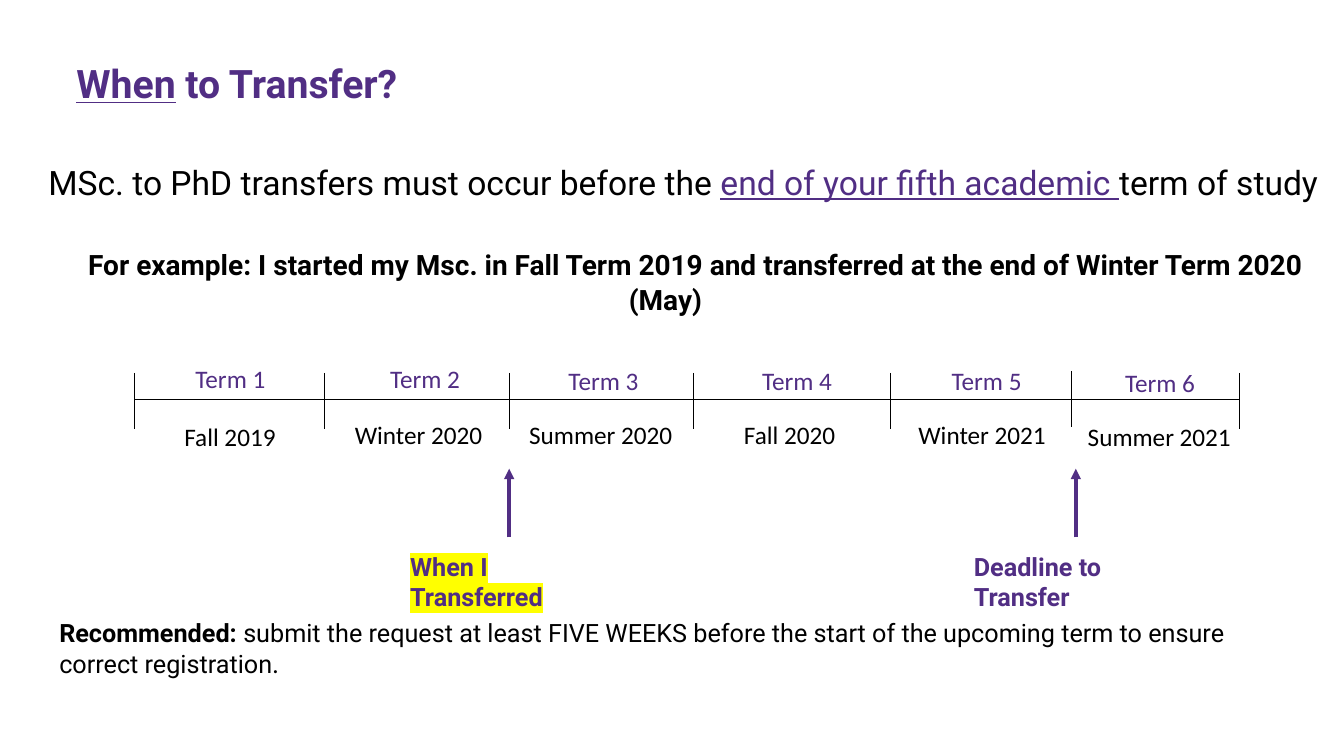
from lxml import etree
from pptx import Presentation
from pptx.dml.color import RGBColor
from pptx.enum.shapes import MSO_CONNECTOR
from pptx.enum.text import MSO_ANCHOR, PP_ALIGN
from pptx.oxml.ns import qn
from pptx.util import Inches, Pt

STRAIGHT = MSO_CONNECTOR.STRAIGHT
TOP = MSO_ANCHOR.TOP
LEFT, CENTER = PP_ALIGN.LEFT, PP_ALIGN.CENTER

# Content: a run is (text, style names)
TITLE = [("When", "title underline"), (" to Transfer?", "title")]
RULE = [
    ("MSc. to PhD transfers must occur before the ", "rule"),
    ("end of your fifth academic ", "rule accent underline"),
    ("term of study", "rule"),
]
EXAMPLE = [(
    "For example: I started my Msc. in Fall Term 2019 and transferred "
    "at the end of Winter Term 2020 (May)", "example",
)]
RECOMMENDATION = [
    ("Recommended: ", "body bold"),
    ("submit the request at least FIVE WEEKS before the start of the "
     "upcoming term to ensure correct registration", "body"),
    (".", "label"),
]
# Term name, left, top; season, year, left, top
TERMS = [
    ("Term 1", 1.84, 3.56, "Fall", 2019, 1.73, 4.13),
    ("Term 2", 3.77, 3.56, "Winter", 2020, 3.42, 4.11),
    ("Term 3", 5.54, 3.58, "Summer", 2020, 5.15, 4.11),
    ("Term 4", 7.46, 3.58, "Fall", 2020, 7.28, 4.11),
    ("Term 5", 9.34, 3.58, "Winter", 2021, 9.01, 4.11),
    ("Term 6", 11.06, 3.59, "Summer", 2021, 10.69, 4.13),
]
SEASON_WIDTHS = {"Fall": 1.12, "Winter": 1.48, "Summer": 1.64}
TERM_WIDTH, LABEL_HEIGHT = 0.9, 0.4
# Tick position, tick top
TICKS = [(1.33, 3.7), (3.22, 3.7), (5.05, 3.7), (6.88, 3.7),
         (8.83, 3.7), (10.63, 3.68), (12.29, 3.7)]
TICK_HEIGHT, AXIS_Y = 0.56, 3.96
# Text, style, box left, box width, arrow position
CALLOUTS = [
    ("When I Transferred", "callout highlight", 3.97, 2.05, 5.05),
    ("Deadline to Transfer", "callout", 9.56, 2.18, 10.67),
]
ARROW_START, ARROW_END, CALLOUT_TOP = 5.33, 4.65, 5.42

# Theme: each style sets some of size, font, colour, bold, underline, highlight
PURPLE, BLACK = "512E84", "000000"
THEME = {
    "title": {"size": 28, "font": "Roboto", "color": PURPLE, "bold": True},
    "rule": {"size": 24, "font": "Roboto", "color": BLACK},
    "example": {"size": 20, "font": "Roboto", "color": BLACK, "bold": True},
    "body": {"size": 18, "font": "Roboto", "color": BLACK},
    "label": {"size": 18, "font": "Calibri", "color": BLACK},
    "callout": {"size": 18, "font": "Roboto", "color": PURPLE, "bold": True},
    "accent": {"color": PURPLE},
    "bold": {"bold": True},
    "underline": {"underline": True},
    "highlight": {"highlight": "FFFF00"},
}
THIN, THICK = 0.5, 2.5


def add_span(para, text, style_names):
    style = {}
    for name in style_names.split():
        style.update(THEME[name])
    span = para.add_run()
    span.text = text
    font = span.font
    font.size = Pt(style["size"])
    font.name = style["font"]
    font.bold = style.get("bold", False)
    font.underline = style.get("underline", False)
    font.color.rgb = RGBColor.from_string(style["color"])
    if "highlight" in style:
        mark = etree.Element(qn("a:highlight"))
        etree.SubElement(mark, qn("a:srgbClr"), val=style["highlight"])
        font._element.find(qn("a:solidFill")).addnext(mark)


def add_text(page, spans, left, top, width, height, wrap=True, align=LEFT, inset=True):
    box = page.shapes.add_textbox(Inches(left), Inches(top), Inches(width), Inches(height))
    frame = box.text_frame
    frame.word_wrap = wrap
    frame.vertical_anchor = TOP
    if not inset:
        frame.margin_left = frame.margin_right = 0
        frame.margin_top = frame.margin_bottom = 0
    para = frame.paragraphs[0]
    para.alignment = align
    for text, style_names in spans:
        add_span(para, text, style_names)
    return para


def add_line(page, x1, y1, x2, y2, color, weight, arrow=False):
    line = page.shapes.add_connector(
        STRAIGHT, Inches(x1), Inches(y1), Inches(x2), Inches(y2))
    line.line.color.rgb = RGBColor.from_string(color)
    line.line.width = Pt(weight)
    if arrow:
        etree.SubElement(line.line._get_or_add_ln(), qn("a:tailEnd"), type="triangle")
    etree.SubElement(line._element.spPr, qn("a:effectLst"))


def main():
    deck = Presentation()
    deck.slide_width, deck.slide_height = Inches(13.33), Inches(7.5)
    page = deck.slides.add_slide(deck.slide_layouts[6])

    # Heading, rule and example
    add_text(page, TITLE, 0.66, 0.54, 4.02, 0.57)
    add_text(page, RULE, 0.22, 1.61, 13.11, 0.4, align=CENTER, inset=False)
    example = add_text(page, EXAMPLE, 0.1, 2.44, 13, 0.7, align=CENTER, inset=False)
    example.line_spacing = Pt(25)
    example._p.get_or_add_pPr().set("indent", str(Inches(0.6)))

    # Timeline
    add_line(page, TICKS[0][0], AXIS_Y, TICKS[-1][0], AXIS_Y, BLACK, THIN)
    for x, top in TICKS:
        add_line(page, x, top, x, top + TICK_HEIGHT, BLACK, THIN)
    for term, term_left, term_top, season, year, left, top in TERMS:
        add_text(page, [(term, "label accent")], term_left, term_top,
                 TERM_WIDTH, LABEL_HEIGHT, wrap=False)
        add_text(page, [(f"{season} {year}", "label")], left, top,
                 SEASON_WIDTHS[season], LABEL_HEIGHT, wrap=False)

    # Callouts under the timeline
    for text, style_names, left, width, x in CALLOUTS:
        add_line(page, x, ARROW_START, x, ARROW_END, PURPLE, THICK, arrow=True)
        add_text(page, [(text, style_names)], left, CALLOUT_TOP, width, 0.7)

    # Recommendation
    add_text(page, RECOMMENDATION, 0.49, 6.08, 12.43, 0.7)

    deck.save("out.pptx")


if __name__ == "__main__":
    main()
